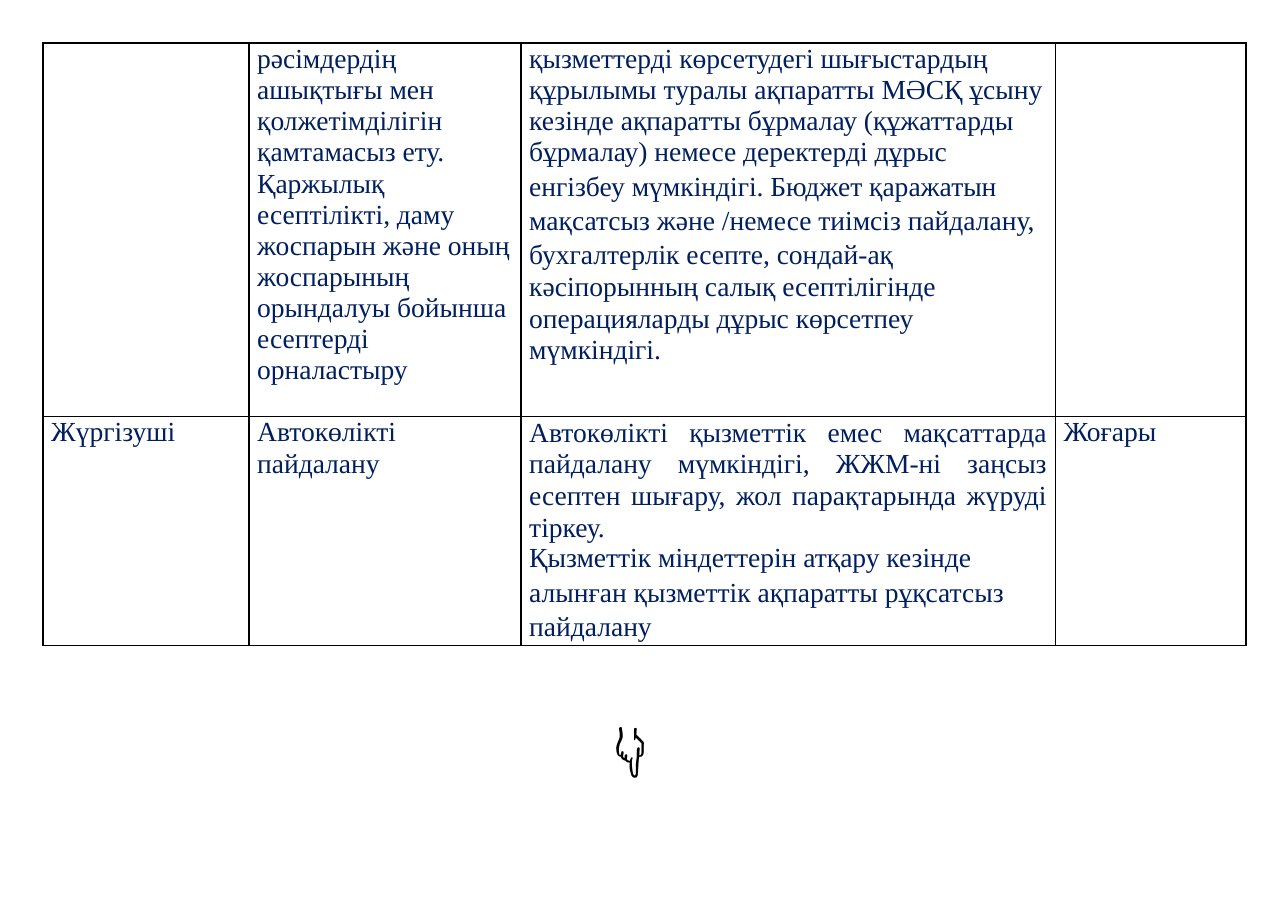
from dataclasses import dataclass
from lxml.etree import SubElement
from pptx import Presentation
from pptx.dml.color import RGBColor
from pptx.enum.text import PP_ALIGN
from pptx.oxml.ns import qn
from pptx.util import Pt


@dataclass(frozen=True)
class Theme:
    body_font: str = "Times New Roman"
    symbol_font: str = "Roboto"
    body_size: float = 18
    symbol_size: float = 36
    navy: str = "001F5F"
    black: str = "000000"
    border: float = 1


THEME = Theme()
PAGE = (841.7, 595.4)
TABLE_ORIGIN = (28.1, 28.1)
COLUMNS = (134.6, 177.8, 349.2, 124.6)
ROWS = (244.1, 149.8)
CELL_INSET = 5.4
HAND_BOX = (401, 465.8, 40.3, 45.4)

EXACT = Pt(20.4)
LOOSE = Pt(22.1)

RISKS = [
    [
        [],
        [
            ("рәсімдердің", {"line": EXACT}),
            ("ашықтығы мен қолжетімділігін", {"line": 1.02}),
            ("қамтамасыз ету.", {"before": 0.5}),
            ("Қаржылық", {"before": 0.5}),
            ("есептілікті, даму жоспарын және оның жоспарының", {"line": 1.02}),
            ("орындалуы бойынша есептерді", {"line": 1.02, "before": 0.1}),
            ("орналастыру", {"before": 0.5}),
        ],
        [
            ("қызметтерді көрсетудегі шығыстардың", {"line": EXACT}),
            ("құрылымы туралы ақпаратты МӘСҚ ұсыну кезінде ақпаратты "
             "бұрмалау (құжаттарды", {"line": 1.02}),
            ("бұрмалау) немесе деректерді дұрыс", {"before": 0.5}),
            ("енгізбеу мүмкіндігі. Бюджет қаражатын мақсатсыз және /немесе "
             "тиімсіз пайдалану, бухгалтерлік есепте, сондай-ақ",
             {"line": LOOSE, "before": 0.8}),
            ("кәсіпорынның салық есептілігінде", {"line": Pt(21.2)}),
            ("операцияларды дұрыс көрсетпеу мүмкіндігі.",
             {"line": 1.02, "before": 0.1}),
        ],
        [],
    ],
    [
        [("Жүргізуші", {"line": EXACT})],
        [("Автокөлікті", {"line": EXACT}), ("пайдалану", {"before": 0.5})],
        [
            ("Автокөлікті қызметтік емес мақсаттарда пайдалану мүмкіндігі, "
             "ЖЖМ-ні заңсыз есептен шығару, жол парақтарында жүруді тіркеу.",
             {"line": Pt(20.7), "align": PP_ALIGN.JUSTIFY}),
            ("Қызметтік міндеттерін атқару кезінде", {"line": Pt(20)}),
            ("алынған қызметтік ақпаратты рұқсатсыз пайдалану",
             {"line": LOOSE, "before": 0.8}),
        ],
        [("Жоғары", {"line": EXACT})],
    ],
]
HAND = "👇"


def write(paragraph, text, *, font=THEME.body_font, size=THEME.body_size,
          color=THEME.navy, line=1.0, before=0, align=PP_ALIGN.LEFT):
    paragraph.alignment = align
    paragraph.line_spacing = line
    paragraph.space_before = Pt(before)
    run = paragraph.add_run()
    run.text = text
    run.font.name = font
    run.font.size = Pt(size)
    run.font.color.rgb = RGBColor.from_string(color)


def outline(cell):
    properties = cell._tc.get_or_add_tcPr()
    for side in ("a:lnL", "a:lnR", "a:lnT", "a:lnB"):
        edge = SubElement(properties, qn(side), w=str(Pt(THEME.border)))
        fill = SubElement(edge, qn("a:solidFill"))
        SubElement(fill, qn("a:srgbClr"), val=THEME.black)


def fill_cell(cell, paragraphs):
    cell.margin_left = cell.margin_right = Pt(CELL_INSET)
    cell.margin_top = cell.margin_bottom = 0
    outline(cell)
    cell.fill.background()
    frame = cell.text_frame
    for index, (text, style) in enumerate(paragraphs):
        paragraph = frame.add_paragraph() if index else frame.paragraphs[0]
        write(paragraph, text, **style)


def add_risk_table(slide):
    left, top = TABLE_ORIGIN
    risk_table = slide.shapes.add_table(
        len(ROWS), len(COLUMNS), Pt(left), Pt(top),
        Pt(sum(COLUMNS)), Pt(sum(ROWS))).table
    risk_table.first_row = risk_table.horz_banding = False
    for column, width in zip(risk_table.columns, COLUMNS):
        column.width = Pt(width)
    for row, height, contents in zip(risk_table.rows, ROWS, RISKS):
        row.height = Pt(height)
        for cell, paragraphs in zip(row.cells, contents):
            fill_cell(cell, paragraphs)


def add_hand(slide):
    frame = slide.shapes.add_textbox(*map(Pt, HAND_BOX)).text_frame
    frame.word_wrap = True
    frame.margin_left = Pt(0.7)
    frame.margin_top = Pt(0.7)
    frame.margin_right = frame.margin_bottom = 0
    write(frame.paragraphs[0], HAND, font=THEME.symbol_font,
          size=THEME.symbol_size, color=THEME.black, before=1)


def main():
    deck = Presentation()
    deck.slide_width, deck.slide_height = map(Pt, PAGE)
    slide = deck.slides.add_slide(deck.slide_layouts[6])
    add_risk_table(slide)
    add_hand(slide)
    deck.save("out.pptx")


if __name__ == "__main__":
    main()
